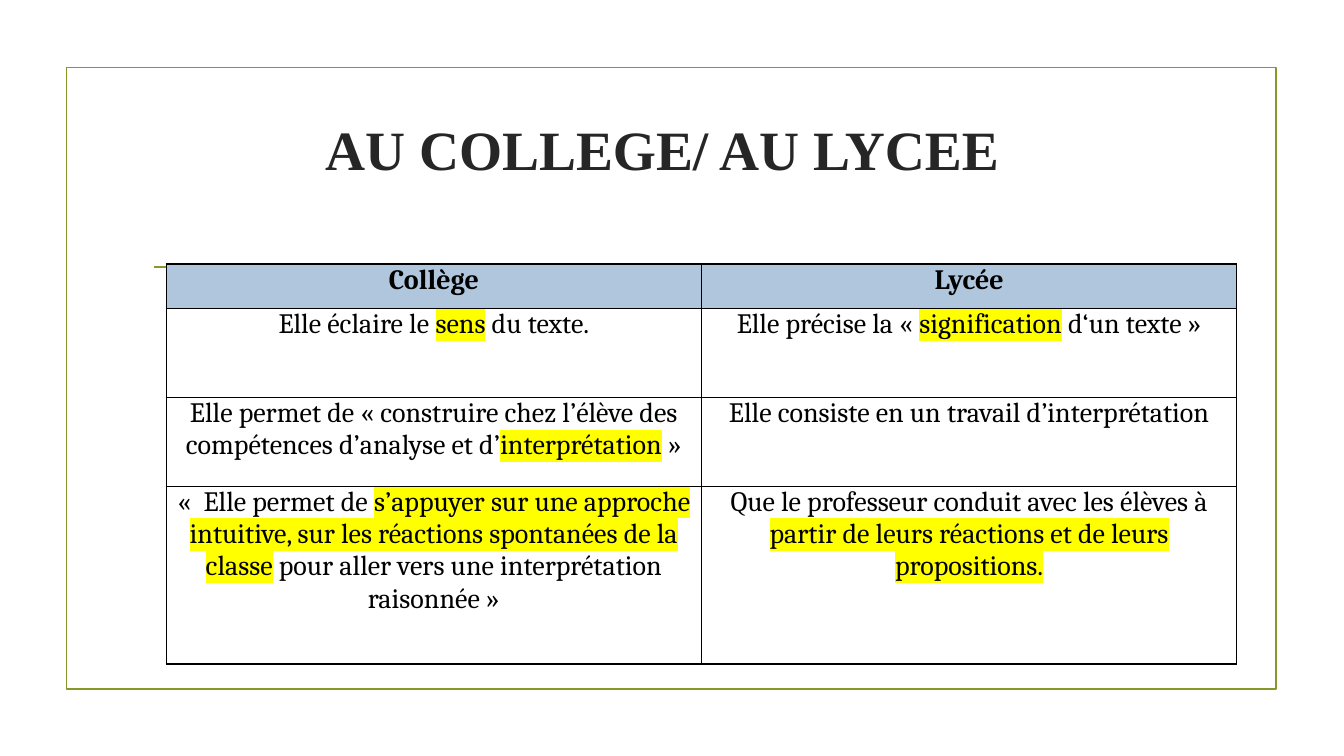
from dataclasses import dataclass

from lxml.etree import SubElement
from pptx import Presentation
from pptx.dml.color import RGBColor
from pptx.enum.shapes import MSO_CONNECTOR, MSO_SHAPE
from pptx.enum.text import MSO_ANCHOR, PP_ALIGN
from pptx.oxml.ns import qn
from pptx.util import Cm, Pt


@dataclass(frozen=True)
class Theme:
    green: str = "83992A"
    dark: str = "262626"
    black: str = "000000"
    white: str = "FFFFFF"
    blue: str = "AFC6DD"
    yellow: str = "FFFF00"
    head: str = "Times New Roman"
    body: str = "Cambria"
    big: float = 39.6
    text: float = 20
    rule: float = 1.25
    edge: float = 1


THEME = Theme()

# Text between bars is highlighted
ROWS = [
    ("Collège", "Lycée"),
    ("Elle éclaire le |sens| du texte.",
     "Elle précise la « |signification| d‘un texte »"),
    ("Elle permet de « construire chez l’élève des compétences "
     "d’analyse et d’|interprétation| »",
     "Elle consiste en un travail d’interprétation"),
    ("«  Elle permet de |s’appuyer sur une approche intuitive, sur les "
     "réactions spontanées de la classe| pour aller vers une "
     "interprétation raisonnée »",
     "Que le professeur conduit avec les élèves à "
     "|partir de leurs réactions et de leurs propositions.|"),
]
UNIT = 1.12
SPANS = (1, 2, 2, 4)


def color(code):
    return RGBColor.from_string(code)


def add_run(para, text, font, size, code, bold=False, mark=False):
    run = para.add_run()
    run.text = text
    run.font.size = Pt(size)
    run.font.bold = bold
    run.font.color.rgb = color(code)
    run.font.name = font
    if mark:
        props = run.font._element
        light = SubElement(props, qn("a:highlight"))
        SubElement(light, qn("a:srgbClr"), val=THEME.yellow)
        props.find(qn("a:latin")).addprevious(light)


def add_frame(slide):
    box = slide.shapes.add_shape(
        MSO_SHAPE.RECTANGLE, Cm(1.68), Cm(1.7), Cm(30.48), Cm(15.67))
    box.shadow.inherit = False
    box.fill.background()
    box.line.color.rgb = color(THEME.green)
    box.line.width = Pt(THEME.rule)


def add_rule(slide):
    rule = slide.shapes.add_connector(
        MSO_CONNECTOR.STRAIGHT, Cm(3.89), Cm(6.73), Cm(30), Cm(6.73))
    rule.line.color.rgb = color(THEME.green)
    rule.line.width = Pt(THEME.rule)
    SubElement(rule._element.spPr, qn("a:effectLst"))


def add_title(slide, text):
    box = slide.shapes.add_textbox(Cm(3.61), Cm(2.72), Cm(26.16), Cm(2.06))
    frame = box.text_frame
    frame.word_wrap = True
    frame.vertical_anchor = MSO_ANCHOR.MIDDLE
    para = frame.paragraphs[0]
    para.alignment = PP_ALIGN.CENTER
    add_run(para, text, THEME.head, THEME.big, THEME.dark, bold=True)


def add_edges(cell):
    props = cell._tc.get_or_add_tcPr()
    for spot, side in enumerate(("lnL", "lnR", "lnT", "lnB")):
        line = SubElement(props, qn(f"a:{side}"), w=str(Pt(THEME.edge)))
        fill = SubElement(line, qn("a:solidFill"))
        SubElement(fill, qn("a:srgbClr"), val=THEME.black)
        props.insert(spot, line)


def fill_cell(cell, text, top):
    cell.margin_left = cell.margin_right = Cm(0.18)
    cell.margin_top = cell.margin_bottom = 0
    cell.fill.solid()
    cell.fill.fore_color.rgb = color(THEME.blue if top else THEME.white)
    add_edges(cell)
    para = cell.text_frame.paragraphs[0]
    para.alignment = PP_ALIGN.CENTER
    for spot, part in enumerate(text.split("|")):
        if part:
            add_run(para, part, THEME.body, THEME.text, THEME.black,
                    bold=top, mark=spot % 2 == 1)


def add_grid(slide):
    table = slide.shapes.add_table(
        len(ROWS), 2, Cm(4.19), Cm(6.65), Cm(26.98),
        Cm(UNIT * sum(SPANS))).table
    for row, span, texts in zip(table.rows, SPANS, ROWS):
        row.height = Cm(UNIT * span)
        for cell, text in zip(row.cells, texts):
            fill_cell(cell, text, texts is ROWS[0])


def main():
    deck = Presentation()
    deck.slide_width, deck.slide_height = Cm(33.87), Cm(19.05)
    slide = deck.slides.add_slide(deck.slide_layouts[6])

    # Backdrop
    add_frame(slide)
    add_rule(slide)

    # Content
    add_title(slide, "AU COLLEGE/ AU LYCEE")
    add_grid(slide)
    deck.save("out.pptx")


if __name__ == "__main__":
    main()
